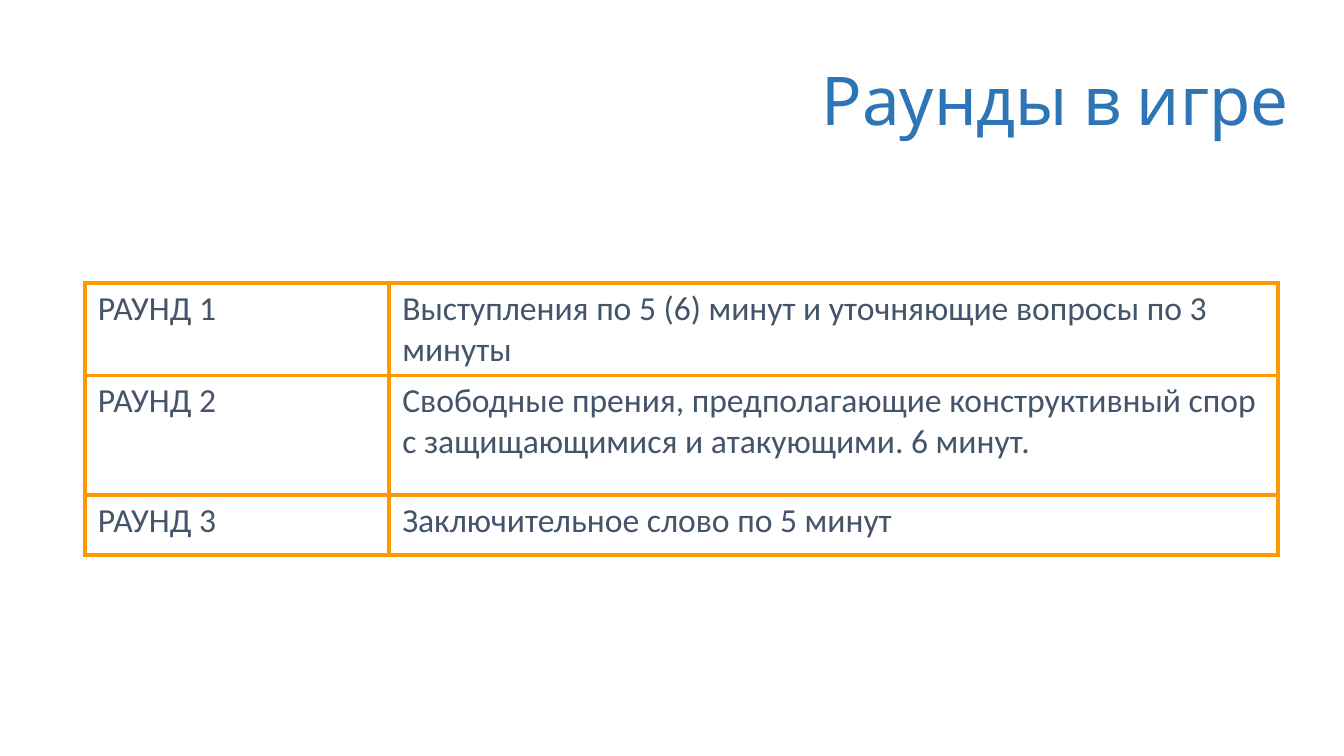
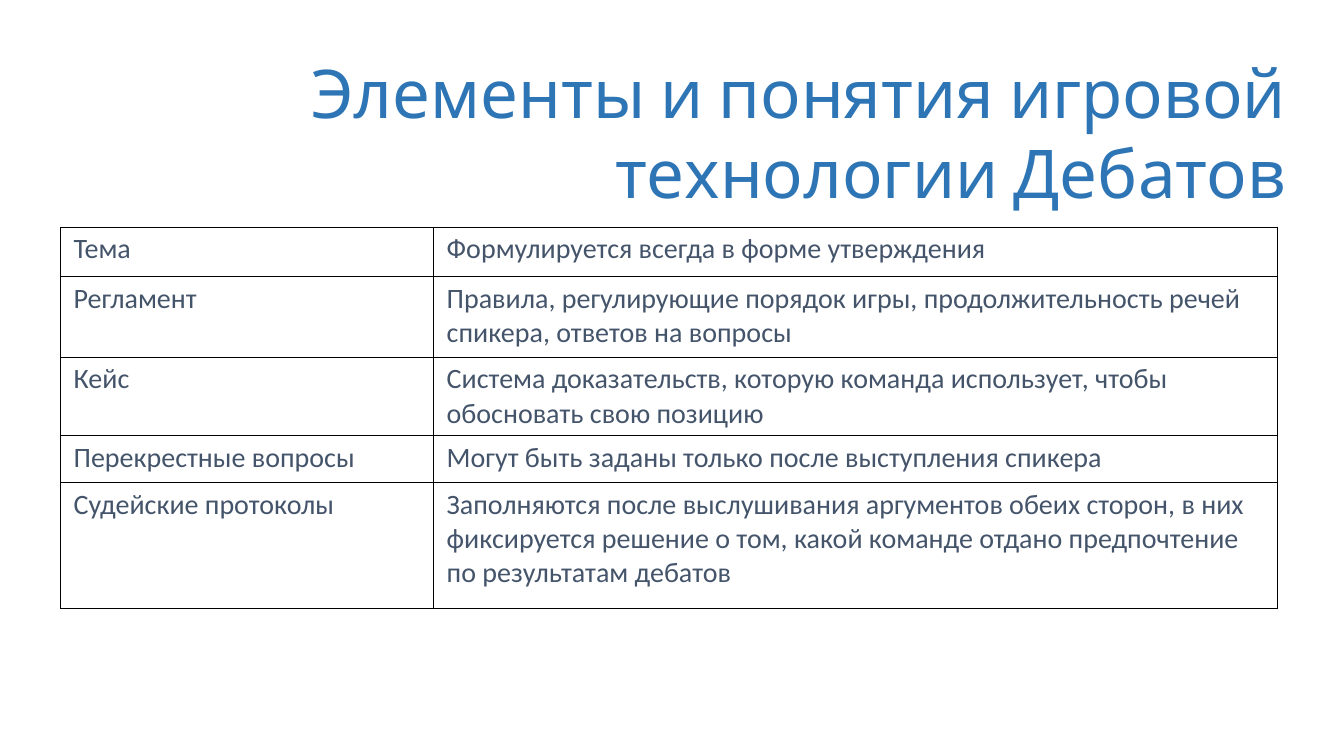
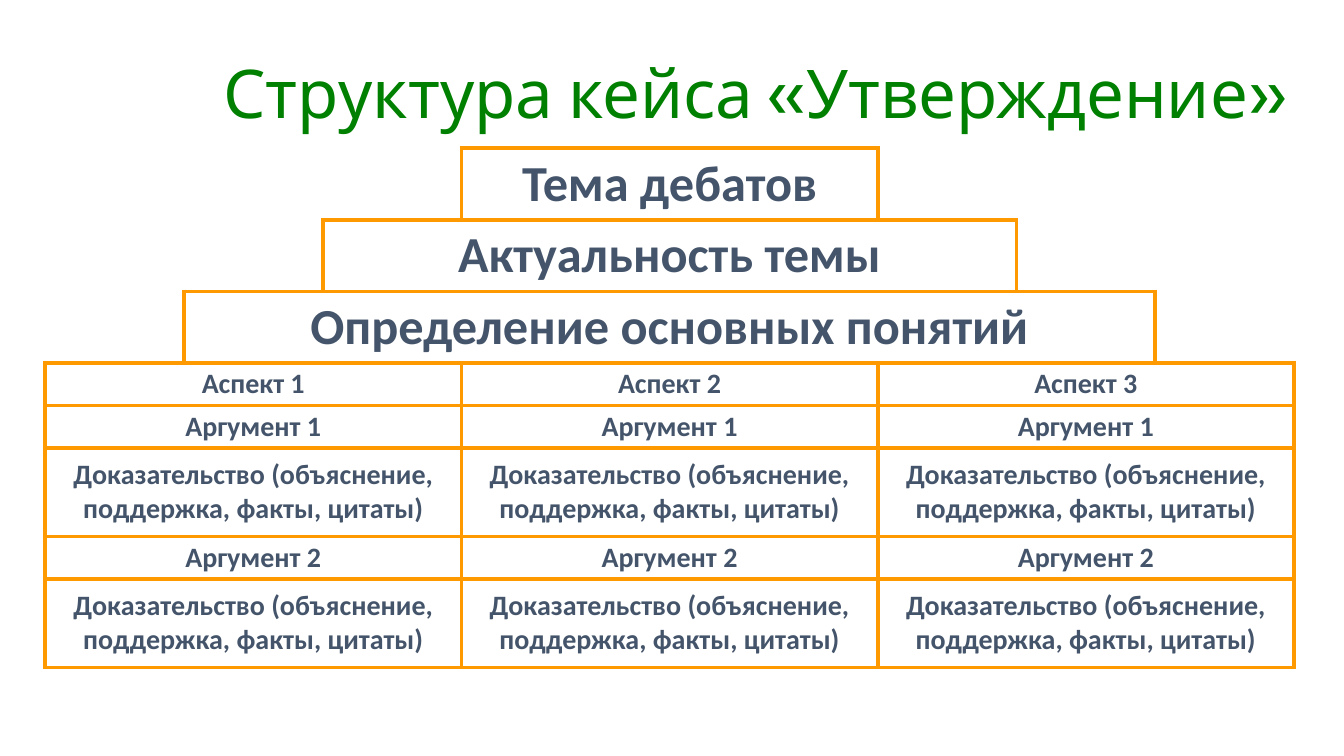
from lxml.etree import SubElement
from pptx import Presentation
from pptx.dml.color import RGBColor
from pptx.enum.text import MSO_ANCHOR as Anchor, MSO_AUTO_SIZE as AutoSize, PP_ALIGN as Align
from pptx.oxml.ns import qn
from pptx.util import Pt

BLUE = RGBColor(0x2E, 0x75, 0xB6)
GREEN = RGBColor(0x00, 0x80, 0x00)
SLATE = RGBColor(0x44, 0x54, 0x6A)
ORANGE = RGBColor(0xFF, 0x99, 0x00)
BLACK = RGBColor(0x00, 0x00, 0x00)

# Border tag and the row and column step to the neighbour on that side.
SIDES = (("a:lnL", 0, -1), ("a:lnR", 0, 1), ("a:lnT", -1, 0), ("a:lnB", 1, 0))


def add_border(cell, tag, color, width):
    """Draw one side of a cell, or clear it when color is None."""
    ln = SubElement(cell._tc.get_or_add_tcPr(), qn(tag), w=str(Pt(width)))
    if color is None:
        SubElement(ln, qn("a:noFill"))
    else:
        fill = SubElement(ln, qn("a:solidFill"))
        SubElement(fill, qn("a:srgbClr"), val=str(color))


class Deck:
    TITLE_FONT, TITLE_SIZE = "Cabin", 48
    BODY_FONT = "Calibri"

    def __init__(self):
        self.prs = Presentation()
        self.prs.slide_width, self.prs.slide_height = Pt(960), Pt(540)

    def slide(self):
        self.s = self.prs.slides.add_slide(self.prs.slide_layouts[6])

    def format_text(self, tf, text, font, size, color, align, bold=False):
        tf.text = text
        p = tf.paragraphs[0]
        p.alignment = align
        f = p.runs[0].font
        f.name, f.size, f.bold = font, Pt(size), bold
        f.color.rgb = color

    def title(self, text, left=49, top=33, height=65.5, color=BLUE):
        tf = self.s.shapes.add_textbox(Pt(left), Pt(top), Pt(877), Pt(height)).text_frame
        tf.word_wrap = True
        tf.auto_size = AutoSize.SHAPE_TO_FIT_TEXT
        self.format_text(tf, text, self.TITLE_FONT, self.TITLE_SIZE, color, Align.RIGHT)

    def table(self, left, top, widths, heights, rows, sizes, line, width,
              margins=(9.4, 3.6), align=Align.LEFT, anchor=Anchor.TOP, bold=False):
        """Rows hold (text, column span) pairs; text None leaves an open cell."""
        tbl = self.s.shapes.add_table(len(heights), len(widths), Pt(left), Pt(top),
                                      Pt(sum(widths)), Pt(sum(heights))).table
        tbl.first_row = tbl.horz_banding = False
        for column, w in zip(tbl.columns, widths):
            column.width = Pt(w)
        for row, h in zip(tbl.rows, heights):
            row.height = Pt(h)

        filled = set()
        for r, row in enumerate(rows):
            c = 0
            for text, span in row:
                cell = tbl.cell(r, c)
                if text is not None:
                    filled.update((r, c + i) for i in range(span))
                    if span > 1:
                        cell.merge(tbl.cell(r, c + span - 1))
                    self.format_text(cell.text_frame, text, self.BODY_FONT, sizes[r],
                                     SLATE, align, bold)
                c += span

        for r in range(len(heights)):
            for c in range(len(widths)):
                cell = tbl.cell(r, c)
                for tag, dr, dc in SIDES:
                    drawn = (r, c) in filled or (r + dr, c + dc) in filled
                    add_border(cell, tag, line if drawn else None, width)
                cell.fill.background()
                cell.margin_left = cell.margin_right = Pt(margins[0])
                cell.margin_top = cell.margin_bottom = Pt(margins[1])
                cell.vertical_anchor = anchor


def term_rows(pairs):
    return [[(text, 1) for text in pair] for pair in pairs]


def rounds_slide(deck):
    deck.slide()
    rows = term_rows([
        ("РАУНД 1", "Выступления по 5 (6) минут и уточняющие вопросы по 3 минуты"),
        ("РАУНД 2", "Свободные прения, предполагающие конструктивный спор "
                    "с защищающимися и атакующими. 6 минут."),
        ("РАУНД 3", "Заключительное слово по 5 минут"),
    ])
    deck.table(60.5, 202.3, [217.5, 635], [66, 85.5, 42.5], rows, [24] * 3, ORANGE, 3)
    deck.title("Раунды в игре", left=50.5, top=38)


def terms_slide(deck):
    deck.slide()
    rows = term_rows([
        ("Тема", "Формулируется всегда в форме утверждения"),
        ("Регламент", "Правила, регулирующие порядок игры, продолжительность речей "
                      "спикера, ответов на вопросы"),
        ("Кейс", "Система доказательств, которую команда использует, чтобы "
                 "обосновать свою позицию"),
        ("Перекрестные вопросы", "Могут быть заданы только после выступления спикера"),
        ("Судейские протоколы", "Заполняются после выслушивания аргументов обеих сторон, в них "
                                "фиксируется решение о том, какой команде отдано предпочтение "
                                "по результатам дебатов"),
    ])
    deck.table(43.2, 162.3, [266.5, 603], [35.3, 57.5, 56, 33.5, 90], rows, [20] * 5, BLACK, 1)
    deck.title("Элементы и понятия игровой технологии Дебатов", height=124)


def case_slide(deck):
    deck.slide()
    steps = ["Тема дебатов", "Актуальность темы", "Определение основных понятий"]
    proof = "Доказательство (объяснение, поддержка, факты, цитаты)"
    rows = []
    for i, step in enumerate(steps):
        gap = [(None, 1)] * (len(steps) - i)
        rows.append(gap + [(step, 2 * i + 1)] + gap)
    rows.append([(f"Аспект {n}", span) for n, span in ((1, 3), (2, 1), (3, 3))])
    for text in ("Аргумент 1", proof, "Аргумент 2", proof):
        rows.append([(text, span) for span in (3, 1, 3)])

    side = [99.1] * 3
    deck.table(32.3, 105.8, side + [297.4] + side, [51.2] * 3 + [30.2] * 2 + [63.4, 30.2, 63.4],
               rows, [36] * 3 + [20] * 5, ORANGE, 3, margins=(7.2, 2.9),
               align=Align.CENTER, anchor=Anchor.MIDDLE, bold=True)
    deck.title("Структура кейса «Утверждение»", color=GREEN)


def main():
    deck = Deck()
    rounds_slide(deck)
    terms_slide(deck)
    case_slide(deck)
    deck.prs.save("out.pptx")


if __name__ == "__main__":
    main()
